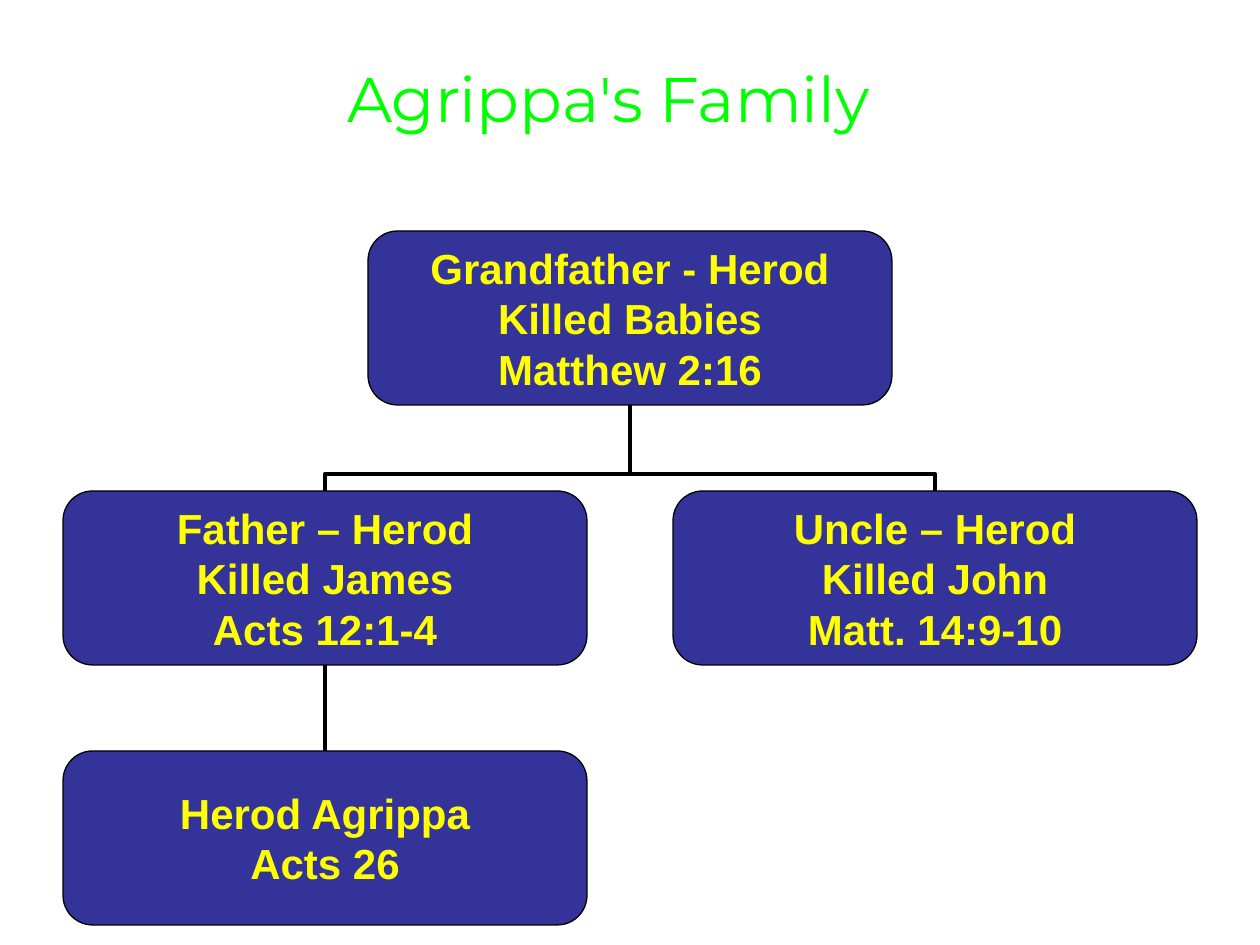
from lxml import etree
from pptx import Presentation
from pptx.dml.color import RGBColor
from pptx.enum.shapes import MSO_CONNECTOR, MSO_SHAPE
from pptx.enum.text import MSO_ANCHOR, MSO_AUTO_SIZE, PP_ALIGN
from pptx.oxml.ns import qn
from pptx.util import Emu, Pt

STRAIGHT, ELBOW = MSO_CONNECTOR.STRAIGHT, MSO_CONNECTOR.ELBOW
ROUNDED = MSO_SHAPE.ROUNDED_RECTANGLE
TOP, MIDDLE = MSO_ANCHOR.TOP, MSO_ANCHOR.MIDDLE
CENTER = PP_ALIGN.CENTER
NO_AUTOFIT = MSO_AUTO_SIZE.NONE

GREEN = RGBColor(0x00, 0xFF, 0x00)
BLUE = RGBColor(0x00, 0x00, 0xFF)
NAVY = RGBColor(0x33, 0x33, 0x99)
YELLOW = RGBColor(0xFF, 0xFF, 0x00)
BLACK = RGBColor(0x00, 0x00, 0x00)

# Tree grid, in px
BOX_W, BOX_H = 524, 174
LEFT, TOP_ROW = 63, 231
COL_STEP, ROW_STEP = 305, 260
GAP = ROW_STEP - BOX_H

# (column, row) and lines of each person
GRANDFATHER, FATHER, UNCLE, AGRIPPA = (1, 0), (0, 1), (2, 1), (0, 2)
PEOPLE = {
    GRANDFATHER: ["Grandfather - Herod", "Killed Babies", "Matthew 2:16"],
    FATHER: ["Father – Herod", "Killed James", "Acts 12:1-4"],
    UNCLE: ["Uncle – Herod", "Killed John", "Matt. 14:9-10"],
    AGRIPPA: ["Herod Agrippa", "Acts 26"],
}
LINKS = [(AGRIPPA, FATHER), (UNCLE, GRANDFATHER), (FATHER, GRANDFATHER)]


def px(n):
    return Emu(round(n * 914400 / 126))


def box_origin(cell):
    col, row = cell
    return LEFT + col * COL_STEP, TOP_ROW + row * ROW_STEP


def set_text(tf, lines, *, size, font, color, bold=False, anchor=MIDDLE):
    tf.word_wrap = False
    tf.auto_size = NO_AUTOFIT
    tf.vertical_anchor = anchor
    for i, line in enumerate(lines):
        p = tf.paragraphs[0] if i == 0 else tf.add_paragraph()
        p.alignment = CENTER
        r = p.add_run()
        r.text = line
        r.font.name, r.font.size, r.font.bold = font, Pt(size), bold
        r.font.color.rgb = color


def outline_text(r, color, width):
    ln = etree.Element(qn("a:ln"), w=str(Pt(width)))
    fill = etree.SubElement(ln, qn("a:solidFill"))
    etree.SubElement(fill, qn("a:srgbClr"), val=str(color))
    r.font._element.insert(0, ln)


def add_title(slide, text):
    title = slide.shapes.title
    title.left, title.top, title.width, title.height = map(px, (199, 53, 819, 147))
    set_text(title.text_frame, [text], size=36, font="Montserrat", color=GREEN, anchor=TOP)
    outline_text(title.text_frame.paragraphs[0].runs[0], BLUE, 1.75)


def add_person(slide, cell, lines):
    x, y = box_origin(cell)
    sp = slide.shapes.add_shape(ROUNDED, px(x), px(y), px(BOX_W), px(BOX_H))
    sp.adjustments[0] = 0.17
    sp.shadow.inherit = False
    sp.fill.solid()
    sp.fill.fore_color.rgb = NAVY
    sp.line.color.rgb = BLACK
    sp.line.width = Pt(0.75)
    tf = sp.text_frame
    tf.margin_left = tf.margin_right = tf.margin_top = tf.margin_bottom = 0
    set_text(tf, lines, size=24, font="Arial", color=YELLOW, bold=True)


def add_link(slide, child, parent):
    """Line from the top of the child's box to the bottom of the parent's."""
    x1, y1 = box_origin(child)
    x2 = box_origin(parent)[0] + BOX_W / 2
    x1 += BOX_W / 2
    y2 = y1 - GAP
    kind = STRAIGHT if x1 == x2 else ELBOW
    side = 1 if x1 > x2 else -1
    if kind == ELBOW:
        # An elbow leaves sideways, so lay it flat and turn it upright
        cx, cy, half = (x1 + x2) / 2, (y1 + y2) / 2, abs(x1 - x2) / 2
        x1, x2 = cx + side * GAP / 2, cx - side * GAP / 2
        y1, y2 = cy - half, cy + half
    link = slide.shapes.add_connector(kind, px(x1), px(y1), px(x2), px(y2))
    link.line.color.rgb = BLACK
    link.line.width = Pt(2.25)
    sp_pr = link._element.spPr
    etree.SubElement(sp_pr, qn("a:effectLst"))
    if kind == ELBOW:
        sp_pr.find(qn("a:xfrm")).set("rot", str(side * 90 % 360 * 60000))
        guides = sp_pr.find(qn("a:prstGeom")).find(qn("a:avLst"))
        etree.SubElement(guides, qn("a:gd"), name="adj1", fmla="val 20000")


def main():
    prs = Presentation()
    prs.slide_width, prs.slide_height = px(1260), px(945)
    slide = prs.slides.add_slide(prs.slide_layouts[5])
    add_title(slide, "Agrippa's Family")

    # Links lie behind the boxes
    for child, parent in LINKS:
        add_link(slide, child, parent)
    for cell, lines in PEOPLE.items():
        add_person(slide, cell, lines)

    prs.save("out.pptx")


if __name__ == "__main__":
    main()
